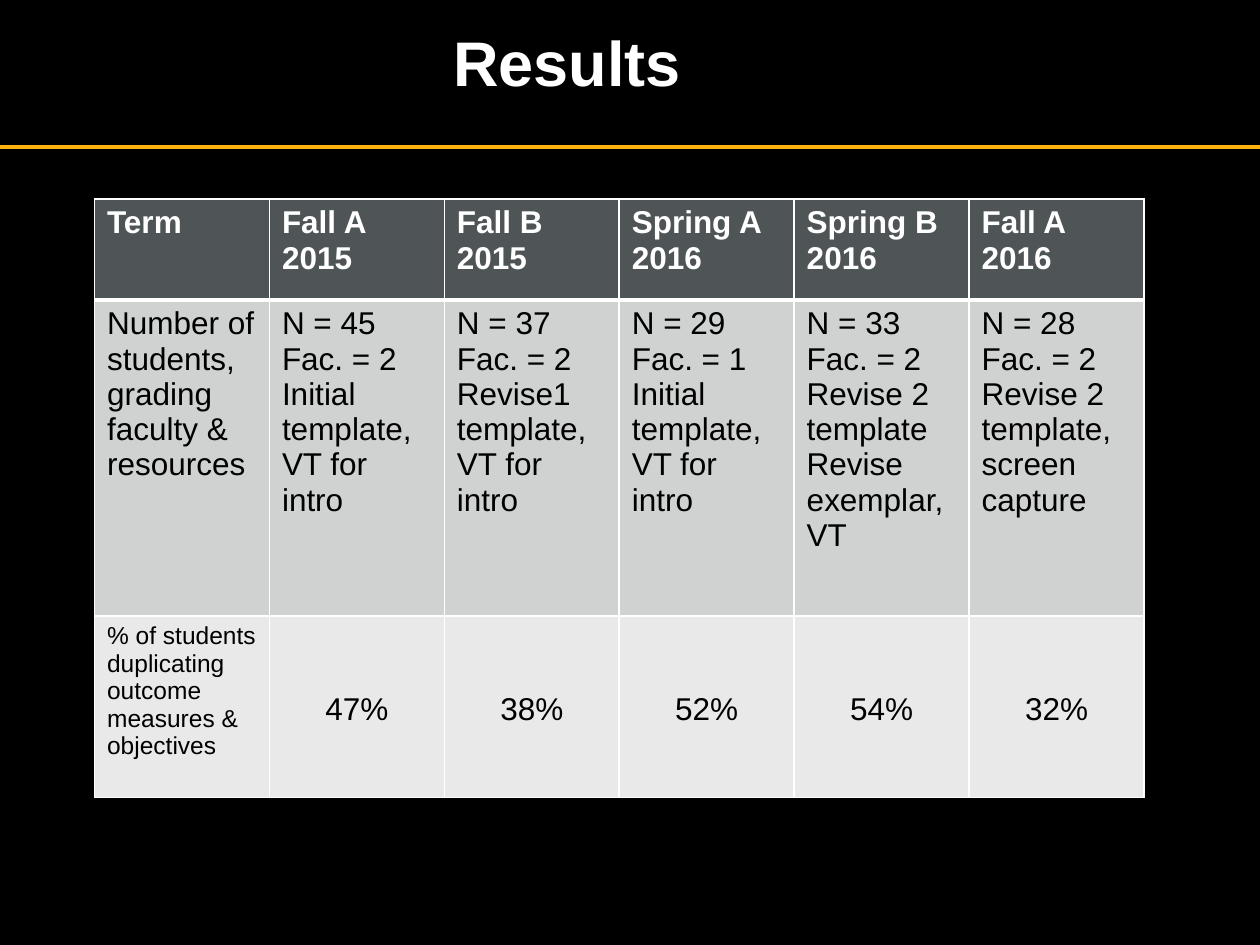
"""Build the Results slide with its table of terms."""
from lxml.etree import SubElement
from pptx import Presentation
from pptx.dml.color import RGBColor
from pptx.enum.shapes import MSO_SHAPE
from pptx.enum.text import MSO_ANCHOR, MSO_AUTO_SIZE, PP_ALIGN
from pptx.oxml.ns import qn
from pptx.util import Inches, Pt

COLORS = {
    "black": "000000",
    "white": "FFFFFF",
    "gold": "FFB310",
    "header": "4F5557",
    "detail": "D0D1D1",
    "percent": "E9E9EA",
}
TERMS = ["Term", "Fall A 2015", "Fall B 2015", "Spring A 2016", "Spring B 2016", "Fall A 2016"]
DETAILS = [
    "Number of students, grading faculty & resources",
    "N = 45\nFac. = 2\nInitial template,\nVT for intro",
    "N = 37\nFac. = 2\nRevise1 template, VT for intro",
    "N = 29\nFac. = 1\nInitial template, VT for intro",
    "N = 33\nFac. = 2\nRevise 2 template\nRevise exemplar, VT",
    "N = 28\nFac. = 2\nRevise 2 template, screen capture",
]
PERCENTS = [
    "% of students duplicating outcome measures & objectives",
    "47%", "38%", "52%", "54%", "32%",
]


class SlideBuilder:
    def __init__(self, presentation, font_name="Arial"):
        self.font_name = font_name
        self.slide = presentation.slides.add_slide(presentation.slide_layouts[5])
        self.fill(self.slide.background, "black")

    def fill(self, target, color):
        target.fill.solid()
        target.fill.fore_color.rgb = RGBColor.from_string(COLORS[color])

    def format_paragraph(self, paragraph, size, color, bold=False, align=PP_ALIGN.LEFT):
        paragraph.alignment = align
        font = paragraph.font
        font.name, font.size, font.bold = self.font_name, Pt(size), bold
        font.color.rgb = RGBColor.from_string(COLORS[color])

    def title(self, text):
        shape = self.slide.shapes.title
        shape.left, shape.top = Inches(0), Inches(0)
        shape.width, shape.height = Inches(10), Inches(1.08)
        self.fill(shape, "black")
        frame = shape.text_frame
        frame.text = text
        frame.auto_size = MSO_AUTO_SIZE.NONE
        frame.vertical_anchor = MSO_ANCHOR.MIDDLE
        frame.margin_left, frame.margin_right = Inches(0.2), Inches(1.2)
        frame.margin_top = frame.margin_bottom = 0
        paragraph = frame.paragraphs[0]
        paragraph.line_spacing = Pt(36)
        self.format_paragraph(paragraph, 36, "white", True, PP_ALIGN.CENTER)

    def band(self, top, height, color):
        shape = self.slide.shapes.add_shape(
            MSO_SHAPE.RECTANGLE, Inches(0), Inches(top), Inches(10), Inches(height))
        shape.shadow.inherit = False
        self.fill(shape, color)
        self.fill(shape.line, color)
        shape.line.width = Pt(2)

    def table(self, left, top, width, heights, columns):
        table = self.slide.shapes.add_table(
            len(heights), columns, Inches(left), Inches(top),
            Inches(width), Inches(sum(heights))).table
        for row, height in zip(table.rows, heights):
            row.height = Inches(height)
        return table

    def borders(self, cell, bottom):
        properties = cell._tc.get_or_add_tcPr()
        for side, width in (("L", 1), ("R", 1), ("T", 1), ("B", bottom)):
            line = SubElement(properties, qn(f"a:ln{side}"), w=str(Pt(width)))
            solid = SubElement(line, qn("a:solidFill"))
            SubElement(solid, qn("a:srgbClr"), val=COLORS["white"])

    def cell(self, cell, text, fill, size=18, color="black", bold=False,
             align=PP_ALIGN.LEFT, bottom=1):
        self.borders(cell, bottom)
        self.fill(cell, fill)
        cell.text = text
        if align == PP_ALIGN.CENTER:
            cell.vertical_anchor = MSO_ANCHOR.MIDDLE
            cell.margin_top = Inches(0.1)
        for paragraph in cell.text_frame.paragraphs:
            self.format_paragraph(paragraph, size, color, bold, align)


def main():
    presentation = Presentation()
    presentation.slide_width, presentation.slide_height = Inches(10), Inches(7.5)
    builder = SlideBuilder(presentation)
    builder.band(1.12, 0.05, "gold")
    builder.band(1, 0.14, "black")
    builder.title("Results")
    table = builder.table(0.75, 1.58, 8.33, [0.8, 2.51, 1.44], len(TERMS))
    for column, (term, detail, percent) in enumerate(zip(TERMS, DETAILS, PERCENTS)):
        builder.cell(table.cell(0, column), term, "header", color="white", bold=True, bottom=3)
        builder.cell(table.cell(1, column), detail, "detail")
        size, align = (18, PP_ALIGN.CENTER) if column else (14, PP_ALIGN.LEFT)
        builder.cell(table.cell(2, column), percent, "percent", size, align=align)
    presentation.save("out.pptx")


if __name__ == "__main__":
    main()
